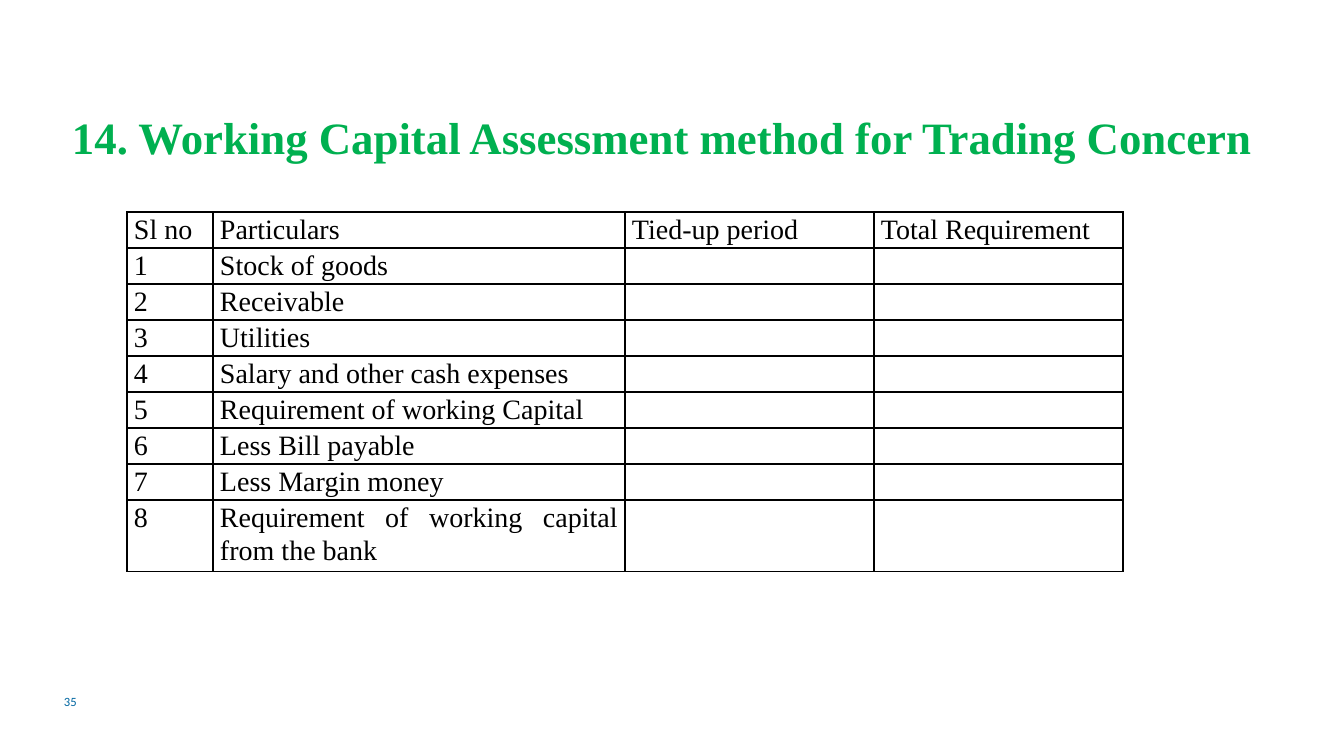
from lxml.etree import SubElement
from pptx import Presentation
from pptx.dml.color import RGBColor
from pptx.enum.text import MSO_ANCHOR, MSO_AUTO_SIZE, PP_ALIGN
from pptx.oxml.ns import qn
from pptx.util import Emu, Pt

SCALE = 914400 / 100.8
SIDES = ("left", "top", "right", "bottom")
HEAD = ("Sl no", "Particulars", "Tied-up period", "Total Requirement")
ITEMS = (
    "Stock of goods",
    "Receivable ",
    "Utilities",
    "Salary and other cash expenses",
    "Requirement of working Capital",
    "Less Bill payable",
    "Less Margin money",
    "Requirement of working capital from the bank",
)


def px(count):
    return Emu(round(count * SCALE))


def tint(code):
    return RGBColor.from_string(code)


def apply(target, values):
    for name, value in values.items():
        setattr(target, name, value)


def pad(target, *sizes):
    apply(target, {f"margin_{side}": px(size) for side, size in zip(SIDES, sizes)})


class Page:
    font = "Times New Roman"
    ink = "000000"

    def __init__(self, deck):
        self.slide = deck.slides.add_slide(deck.slide_layouts[5])

    def words(self, para, text, size, color=ink, font=font, bold=False):
        run = para.add_run()
        run.text = text
        apply(run.font, {"name": font, "size": Pt(size), "bold": bold})
        run.font.color.rgb = tint(color)

    def place(self, shape, box):
        apply(shape, dict(zip(("left", "top", "width", "height"), map(px, box))))

    def title(self, text, box):
        shape = self.slide.shapes.title
        self.place(shape, box)
        frame = shape.text_frame
        apply(frame, {"word_wrap": True, "auto_size": MSO_AUTO_SIZE.NONE,
                      "vertical_anchor": MSO_ANCHOR.TOP})
        pad(frame, 10, 10, 10, 10)
        para = frame.paragraphs[0]
        para.alignment = PP_ALIGN.LEFT
        self.words(para, text, 32, "00B050", bold=True)

    def label(self, text, box):
        frame = self.slide.shapes.add_textbox(*map(px, box)).text_frame
        apply(frame, {"word_wrap": True, "vertical_anchor": MSO_ANCHOR.MIDDLE})
        pad(frame, 7, 4, 7, 4)
        self.words(frame.paragraphs[0], text, 9, "0066A1", "Calibri")

    def edge(self, cell):
        """Draw a 1 pt line on all four sides of the cell."""
        props = cell._tc.get_or_add_tcPr()
        for side in ("lnL", "lnR", "lnT", "lnB"):
            line = SubElement(props, qn(f"a:{side}"), w=str(Pt(1)))
            fill = SubElement(line, qn("a:solidFill"))
            SubElement(fill, qn("a:srgbClr"), val=self.ink)

    def cell(self, cell, text):
        pad(cell, 7, 0, 7, 0)
        self.edge(cell)
        cell.fill.background()
        if text:
            para = cell.text_frame.paragraphs[0]
            apply(para, {"alignment": PP_ALIGN.JUSTIFY, "line_spacing": 1.07})
            self.words(para, text, 20)

    def table(self, rows, left, top, widths, height):
        size = px(sum(widths)), px(height * len(rows))
        grid = self.slide.shapes.add_table(
            len(rows), len(widths), px(left), px(top), *size).table
        apply(grid, {"first_row": False, "horz_banding": False})
        for col, width in zip(grid.columns, widths):
            col.width = px(width)
        for line, row in zip(grid.rows, rows):
            line.height = px(height)
            for cell, text in zip(line.cells, row):
                self.cell(cell, text)


def main():
    deck = Presentation()
    apply(deck, {"slide_width": px(1344), "slide_height": px(756)})
    page = Page(deck)
    page.label("35", (57, 682, 302, 40))
    page.title("14. Working Capital Assessment method for Trading Concern",
               (62, 100, 1238, 57))
    rows = [HEAD] + [(str(num), item, "", "") for num, item in enumerate(ITEMS, 1)]
    page.table(rows, 127, 212, (86, 412, 249, 249), 33)
    deck.save("out.pptx")


if __name__ == "__main__":
    main()
